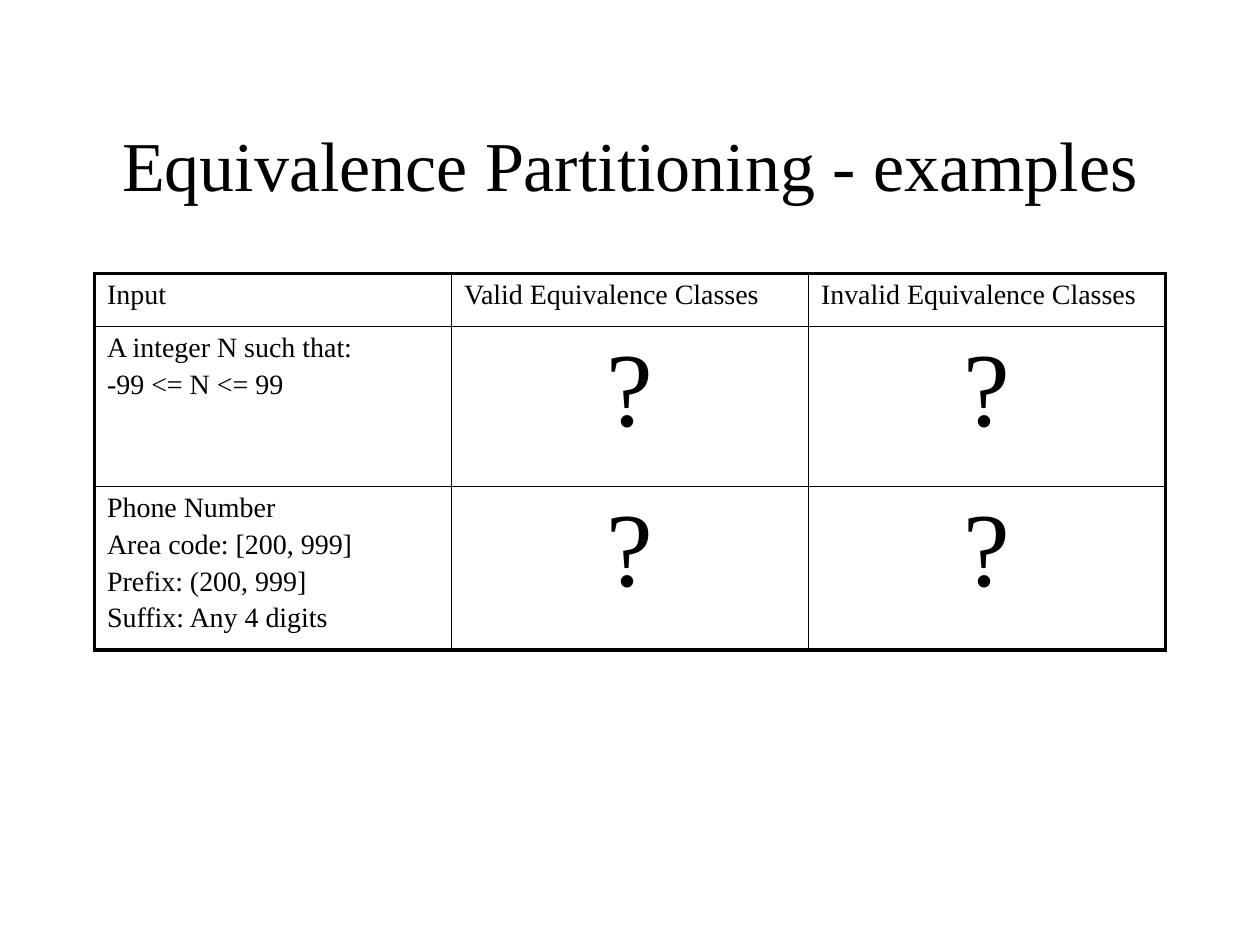
from lxml.etree import SubElement
from pptx import Presentation
from pptx.dml.color import RGBColor
from pptx.enum.text import MSO_ANCHOR, PP_ALIGN
from pptx.oxml.ns import qn
from pptx.util import Inches, Pt

BLACK = RGBColor(0, 0, 0)
FONT = "Times New Roman"
THIN, THICK = Pt(1), Pt(2.25)

TITLE = "Equivalence Partitioning - examples"
ROWS = [
    ["Input", "Valid Equivalence Classes", "Invalid Equivalence Classes"],
    ["A integer N such that:\n-99 <= N <= 99", "?", "?"],
    ["Phone Number\nArea code: [200, 999]\nPrefix: (200, 999]\nSuffix: Any 4 digits", "?", "?"],
]
ROW_HEIGHTS = [0.42, 1.27, 1.27]
LEFT, WIDTH = 0.75, 8.5


def format_paragraph(paragraph, size, alignment):
    paragraph.alignment = alignment
    for run in paragraph.runs:
        run.font.name = FONT
        run.font.size = Pt(size)
        run.font.color.rgb = BLACK


def set_space_before(paragraph, percent):
    spacing = SubElement(paragraph._p.get_or_add_pPr(), qn("a:spcBef"))
    SubElement(spacing, qn("a:spcPct"), val=str(percent * 1000))


def set_borders(cell, outer_edges):
    properties = cell._tc.get_or_add_tcPr()
    for edge, is_outer in outer_edges.items():
        width = THICK if is_outer else THIN
        line = SubElement(properties, qn(f"a:ln{edge}"), w=str(int(width)))
        fill = SubElement(line, qn("a:solidFill"))
        SubElement(fill, qn("a:srgbClr"), val=str(BLACK))


def add_title(slide):
    shape = slide.shapes.add_textbox(Inches(LEFT), Inches(0.67), Inches(WIDTH), Inches(1.25))
    text_frame = shape.text_frame
    text_frame.word_wrap = True
    text_frame.vertical_anchor = MSO_ANCHOR.MIDDLE
    text_frame.text = TITLE
    format_paragraph(text_frame.paragraphs[0], 40, PP_ALIGN.CENTER)


def add_class_table(slide):
    last_row, last_column = len(ROWS) - 1, len(ROWS[0]) - 1
    table = slide.shapes.add_table(
        len(ROWS), len(ROWS[0]), Inches(LEFT), Inches(2.17),
        Inches(WIDTH), Inches(sum(ROW_HEIGHTS)),
    ).table
    table.first_row = table.horz_banding = False
    for row, height in zip(table.rows, ROW_HEIGHTS):
        row.height = Inches(height)
    for row_index, texts in enumerate(ROWS):
        for column_index, text in enumerate(texts):
            cell = table.cell(row_index, column_index)
            cell.text_frame.text = text
            size, alignment = (60, PP_ALIGN.CENTER) if text == "?" else (16, PP_ALIGN.LEFT)
            for paragraph in cell.text_frame.paragraphs:
                format_paragraph(paragraph, size, alignment)
                set_space_before(paragraph, 20)
            set_borders(cell, {
                "L": column_index == 0,
                "R": column_index == last_column,
                "T": row_index == 0,
                "B": row_index == last_row,
            })
            cell.fill.background()


def main():
    presentation = Presentation()
    presentation.slide_width, presentation.slide_height = Inches(10), Inches(7.5)
    slide = presentation.slides.add_slide(presentation.slide_layouts[6])
    add_title(slide)
    add_class_table(slide)
    presentation.save("out.pptx")


if __name__ == "__main__":
    main()
